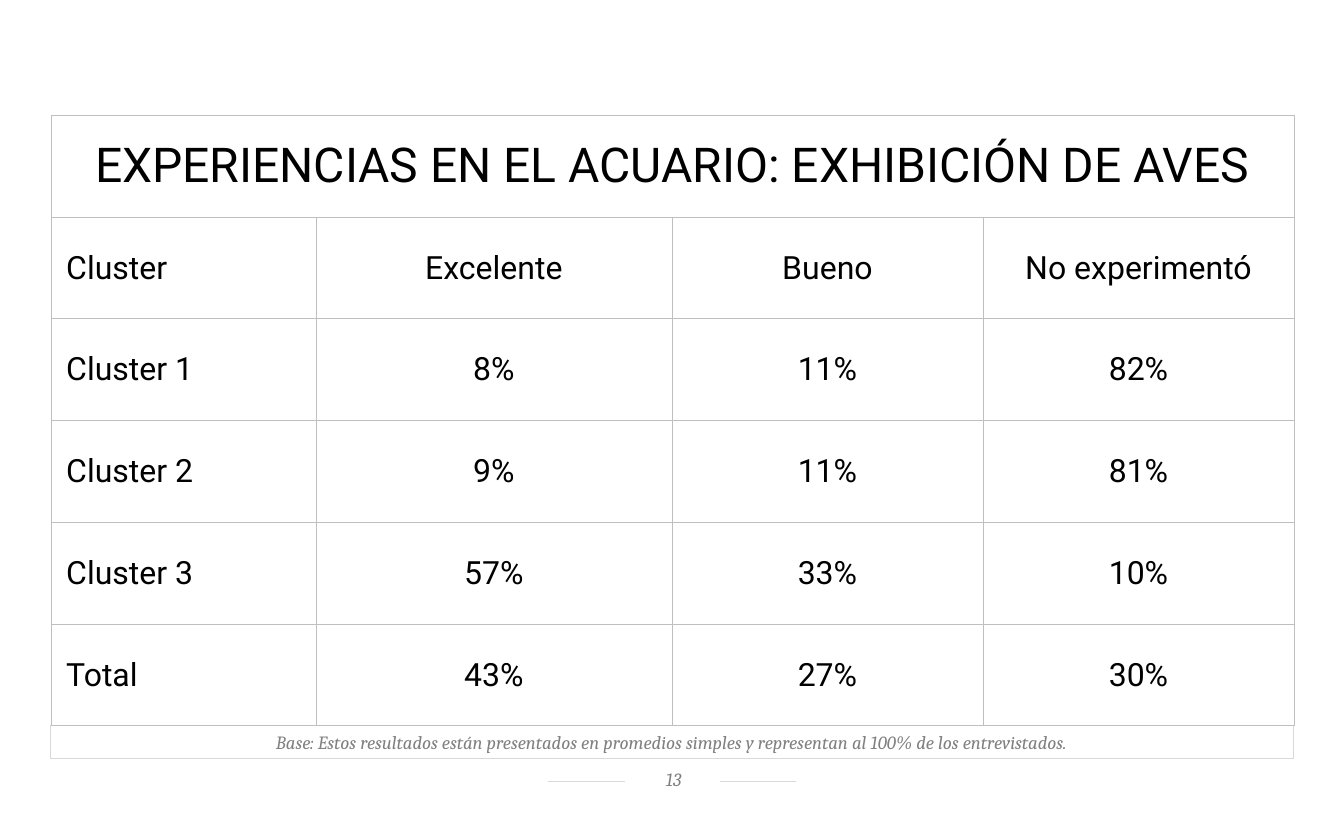
import pptx
import pptx.dml.color
import pptx.enum.shapes
import pptx.enum.text
import pptx.oxml
import pptx.oxml.ns
import pptx.util
from pptx.util import Inches

COLORS = {"text": "000000", "note": "808080", "grid": "BFBFBF",
          "rule": "D9D9D9", "paper": "FFFFFF"}
LEFT, WIDTH = 0.53, 12.94
TABLE_TOP, ROW_HEIGHT = 1.2, 1.06
COLUMN_WIDTHS = [2.76, 3.71, 3.24, 3.24]
TITLE = "EXPERIENCIAS EN EL ACUARIO: EXHIBICIÓN DE AVES"
ROWS = [
    ["Cluster", "Excelente", "Bueno", "No experimentó"],
    ["Cluster 1", "8%", "11%", "82%"],
    ["Cluster 2", "9%", "11%", "81%"],
    ["Cluster 3", "57%", "33%", "10%"],
    ["Total", "43%", "27%", "30%"],
]
NOTE = ("Base: Estos resultados están presentados en promedios simples "
        "y representan al 100% de los entrevistados.")


def rgb(name):
    return pptx.dml.color.RGBColor.from_string(COLORS[name])


def set_margins(target, left, top, right, bottom):
    target.margin_left, target.margin_top = Inches(left), Inches(top)
    target.margin_right, target.margin_bottom = Inches(right), Inches(bottom)


def write(frame, text, font, size, color, italic=False, centered=True):
    frame.text = text
    paragraph = frame.paragraphs[0]
    align = pptx.enum.text.PP_ALIGN
    paragraph.alignment = align.CENTER if centered else align.LEFT
    for span in paragraph.runs:
        span.font.name = font
        span.font.size = pptx.util.Pt(size)
        span.font.italic = italic
        span.font.color.rgb = rgb(color)


def add_rule(page, left, right, y):
    rule = page.shapes.add_connector(
        pptx.enum.shapes.MSO_CONNECTOR.STRAIGHT,
        Inches(left), Inches(y), Inches(right), Inches(y))
    rule.line.color.rgb = rgb("rule")
    rule.line.width = pptx.util.Pt(0.5)
    rule._element.spPr.append(pptx.oxml.parse_xml(
        f"<a:effectLst {pptx.oxml.ns.nsdecls('a')}/>"))


def add_note_box(page, text, left, top, width, height):
    """Add a white, unlined rectangle with small grey italic text."""
    box = page.shapes.add_shape(
        pptx.enum.shapes.MSO_SHAPE.RECTANGLE,
        Inches(left), Inches(top), Inches(width), Inches(height))
    box.shadow.inherit = False
    box.fill.solid()
    box.fill.fore_color.rgb = rgb("paper")
    box.line.fill.background()
    box.text_frame.word_wrap = True
    box.text_frame.vertical_anchor = pptx.enum.text.MSO_ANCHOR.MIDDLE
    write(box.text_frame, text, "Cambria", 14, "note", italic=True)
    return box


def add_borders(cell):
    properties = cell._tc.get_or_add_tcPr()
    for position, side in enumerate("LRTB"):
        properties.insert(position, pptx.oxml.parse_xml(
            f"<a:ln{side} {pptx.oxml.ns.nsdecls('a')} w='6350'><a:solidFill>"
            f"<a:srgbClr val='{COLORS['grid']}'/></a:solidFill></a:ln{side}>"))


def fill_cell(cell, text, size, is_label=False):
    cell.vertical_anchor = pptx.enum.text.MSO_ANCHOR.MIDDLE
    set_margins(cell, 0.08 if is_label else 0.01, 0.01, 0.01, 0)
    write(cell.text_frame, text, "Roboto", size, "text", centered=not is_label)
    if is_label:
        indent = cell.text_frame.paragraphs[0]._p.get_or_add_pPr()
        indent.set("marL", str(Inches(0.08)))
        indent.set("indent", "0")


def add_results_table(page):
    row_count = len(ROWS) + 1
    table = page.shapes.add_table(
        row_count, len(COLUMN_WIDTHS), Inches(LEFT), Inches(TABLE_TOP),
        Inches(WIDTH), Inches(ROW_HEIGHT * row_count)).table
    table.first_row = table.horz_banding = False
    for column, width in zip(table.columns, COLUMN_WIDTHS):
        column.width = Inches(width)
    for row in table.rows:
        row.height = Inches(ROW_HEIGHT)
    for cell in table.iter_cells():
        cell.fill.background()
        add_borders(cell)

    table.cell(0, 0).merge(table.cell(0, len(COLUMN_WIDTHS) - 1))
    fill_cell(table.cell(0, 0), TITLE, 36)
    for row_index, values in enumerate(ROWS, start=1):
        for column_index, value in enumerate(values):
            fill_cell(table.cell(row_index, column_index), value, 24,
                      is_label=column_index == 0)


def main():
    deck = pptx.Presentation()
    deck.slide_width, deck.slide_height = Inches(14), Inches(8.5)
    page = deck.slides.add_slide(deck.slide_layouts[6])

    add_rule(page, 5.71, 8.29, 8.14)
    number = add_note_box(page, "13", 6.51, 7.98, 0.99, 0.29)
    set_margins(number.text_frame, 0.12, 0.02, 0.1, 0.05)

    note = add_note_box(page, NOTE, LEFT, 7.56, WIDTH, 0.34)
    note.line.color.rgb = rgb("rule")
    note.line.width = pptx.util.Pt(0.75)
    note.text_frame.vertical_anchor = pptx.enum.text.MSO_ANCHOR.BOTTOM
    note.text_frame.auto_size = pptx.enum.text.MSO_AUTO_SIZE.SHAPE_TO_FIT_TEXT

    add_results_table(page)
    deck.save("out.pptx")


if __name__ == "__main__":
    main()
